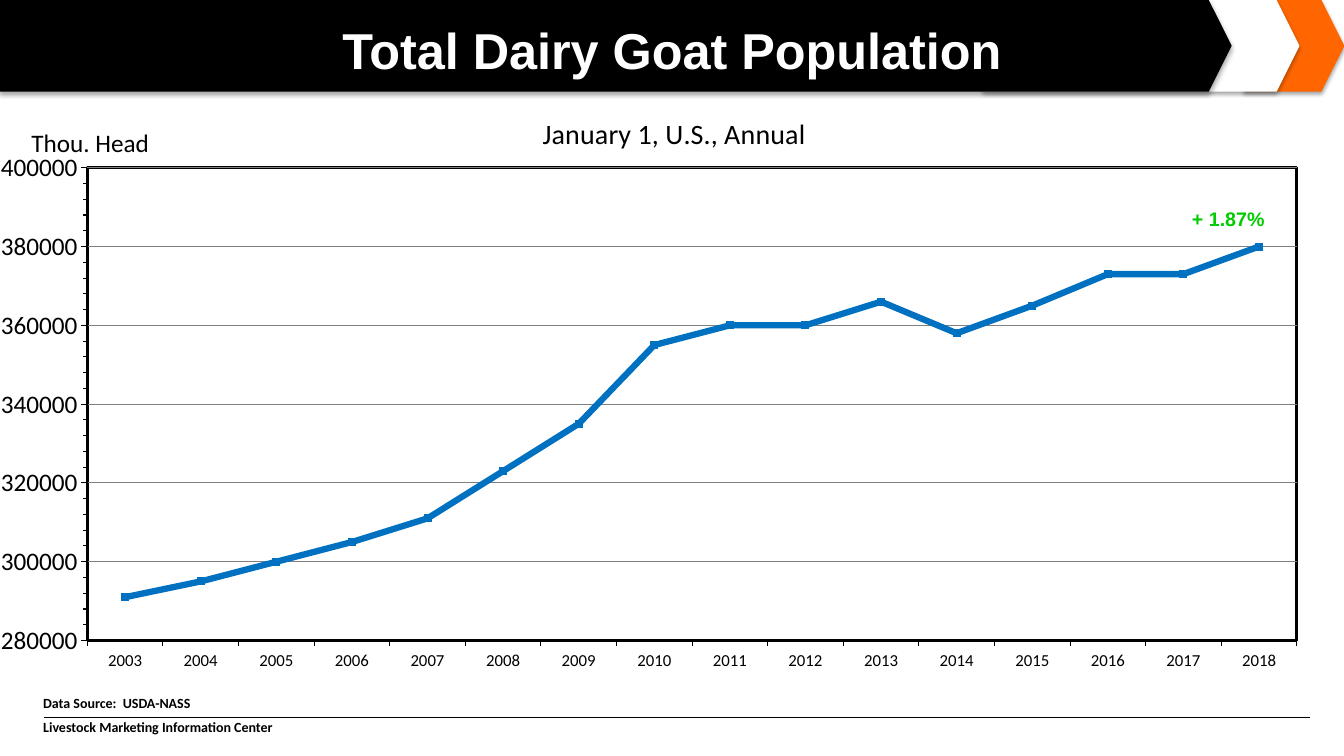
from lxml.etree import SubElement
from pptx import Presentation
from pptx.chart.data import CategoryChartData
from pptx.dml.color import RGBColor
from pptx.enum.chart import XL_CHART_TYPE as ChartType, XL_TICK_MARK as TickMark
from pptx.enum.shapes import MSO_CONNECTOR as Connector, MSO_SHAPE as Preset
from pptx.enum.text import MSO_ANCHOR as Anchor, PP_ALIGN as Align
from pptx.oxml.ns import qn
from pptx.util import Cm, Pt


def color(hex_string):
    return RGBColor.from_string(hex_string)


def set_layout(parent, position, **values):
    """Give a chart part a manual layout in fractions of the chart, as child number position."""
    for old in parent.findall(qn("c:layout")):
        parent.remove(old)
    layout = SubElement(parent, qn("c:layout"))
    parent.insert(position, layout)
    manual = SubElement(layout, qn("c:manualLayout"))
    for tag, value in values.items():
        SubElement(manual, qn(f"c:{tag}")).set("val", str(value))


prs = Presentation()
prs.slide_width, prs.slide_height = Cm(33.87), Cm(19.05)
slide = prs.slides.add_slide(prs.slide_layouts[5])
shapes = slide.shapes

# Banner: overlapping arrows, rearmost first
for left, width, fill in [(31.34, 2.54, "FF6600"), (24.77, 7.98, "FFFFFF"), (0, 31.04, "000000")]:
    arrow = shapes.add_shape(Preset.PENTAGON, Cm(left), Cm(0), Cm(width), Cm(2.31))
    arrow.adjustments[0] = 0.25
    arrow.fill.solid()
    arrow.fill.fore_color.rgb = color(fill)
    arrow.line.fill.background()
    arrow.shadow.inherit = False
    effects = arrow._element.spPr.find(qn("a:effectLst"))
    shadow = SubElement(effects, qn("a:outerShdw"), blurRad=str(Pt(3.1)), dist=str(Pt(1.8)),
                        dir="5400000", rotWithShape="0")
    black = SubElement(shadow, qn("a:srgbClr"), val="000000")
    SubElement(black, qn("a:alpha"), val="35000")

title = shapes.title
shapes._spTree.append(title._element)
title.left, title.top, title.width, title.height = Cm(1.7), Cm(0.36), Cm(30.48), Cm(1.75)
title.text_frame.text = "Total Dairy Goat Population"
title.text_frame.vertical_anchor = Anchor.MIDDLE
heading = title.text_frame.paragraphs[0]
heading.alignment = Align.CENTER
heading.font.name, heading.font.size, heading.font.bold = "Arial", Pt(36), True
heading.font.color.rgb = color("FFFFFF")

# Population chart
population = CategoryChartData(number_format="General")
population.categories = [str(year) for year in range(2003, 2019)]
population.add_series("Series 1", [
    291000, 295000, 300000, 305000, 311000, 323000, 335000, 355000,
    360000, 360000, 366000, 358000, 365000, 373000, 373000, 380000])
chart = shapes.add_chart(ChartType.LINE, Cm(0), Cm(1.32), Cm(33.87), Cm(15.72), population).chart
chart.has_legend = False
chart.font.name, chart.font.size = "Calibri", Pt(18)
chart.font.color.rgb = color("000000")

years, heads = chart.category_axis, chart.value_axis
years.tick_labels.font.size = Pt(12)
heads.minimum_scale, heads.maximum_scale = 280000, 400000
heads.major_unit, heads.minor_unit = 20000, 4000
heads.minor_tick_mark = TickMark.OUTSIDE
heads.major_gridlines.format.line.color.rgb = color("808080")
heads.major_gridlines.format.line.width = Pt(0.75)
for axis in (years, heads):
    axis.major_tick_mark = TickMark.OUTSIDE
    axis.format.line.color.rgb = color("000000")
    axis.format.line.width = Pt(0.75)

chart.has_title = heads.has_title = True
for caption, text, size, x, y in [
        (chart.chart_title, "January 1, U.S., Annual", 20, 0.4, 0.09),
        (heads.axis_title, "Thou. Head", 18, 0.02, 0.11)]:
    caption.text_frame.text = text
    caption.text_frame._txBody.bodyPr.set("rot", "0")
    font = caption.text_frame.paragraphs[0].runs[0].font
    font.name, font.size, font.bold = "Calibri", Pt(size), False
    font.color.rgb = color("000000")
    set_layout(caption._element, 1, xMode="edge", yMode="edge", x=x, y=y)

plot_area = chart._chartSpace.chart.plotArea
set_layout(plot_area, 0, layoutTarget="inner", xMode="edge", yMode="edge",
           x=0.065, y=0.185, w=0.9, h=0.758)
frame = SubElement(plot_area, qn("c:spPr"))
frame_fill = SubElement(frame, qn("a:solidFill"))
frame_line = SubElement(SubElement(frame, qn("a:ln"), w=str(Pt(2.25))), qn("a:solidFill"))
SubElement(frame_fill, qn("a:srgbClr"), val="FFFFFF")
SubElement(frame_line, qn("a:srgbClr"), val="000000")

chart.plots[0].vary_by_categories = False
goats = chart.plots[0].series[0]
goats.smooth = False
goats.marker.style = None
goats.format.line.color.rgb = color("0070C0")
goats.format.line.width = Pt(4.5)

# Footer rule
rule = shapes.add_connector(Connector.STRAIGHT, Cm(1.12), Cm(18.08), Cm(33.02), Cm(18.08))
rule.line.color.rgb = color("000000")
rule.line.width = Pt(0.75)
SubElement(rule._element.spPr, qn("a:effectLst"))

# Source note and growth label
for left, top, width, height, text, name, size, ink in [
        (0.84, 17.37, 11.43, 1.32,
         "Data Source:  USDA-NASS\nLivestock Marketing Information Center", "Calibri", 10, "000000"),
        (29.79, 5.08, 2.36, 0.99, "+ 1.87%", "Arial", 14, "00CC00")]:
    note = shapes.add_textbox(Cm(left), Cm(top), Cm(width), Cm(height)).text_frame
    note.text = text
    for index, paragraph in enumerate(note.paragraphs):
        if index:
            paragraph.space_before = Pt(5)
        font = paragraph.runs[0].font
        font.name, font.size, font.bold = name, Pt(size), True
        font.color.rgb = color(ink)
    note.word_wrap = True

prs.save("out.pptx")
